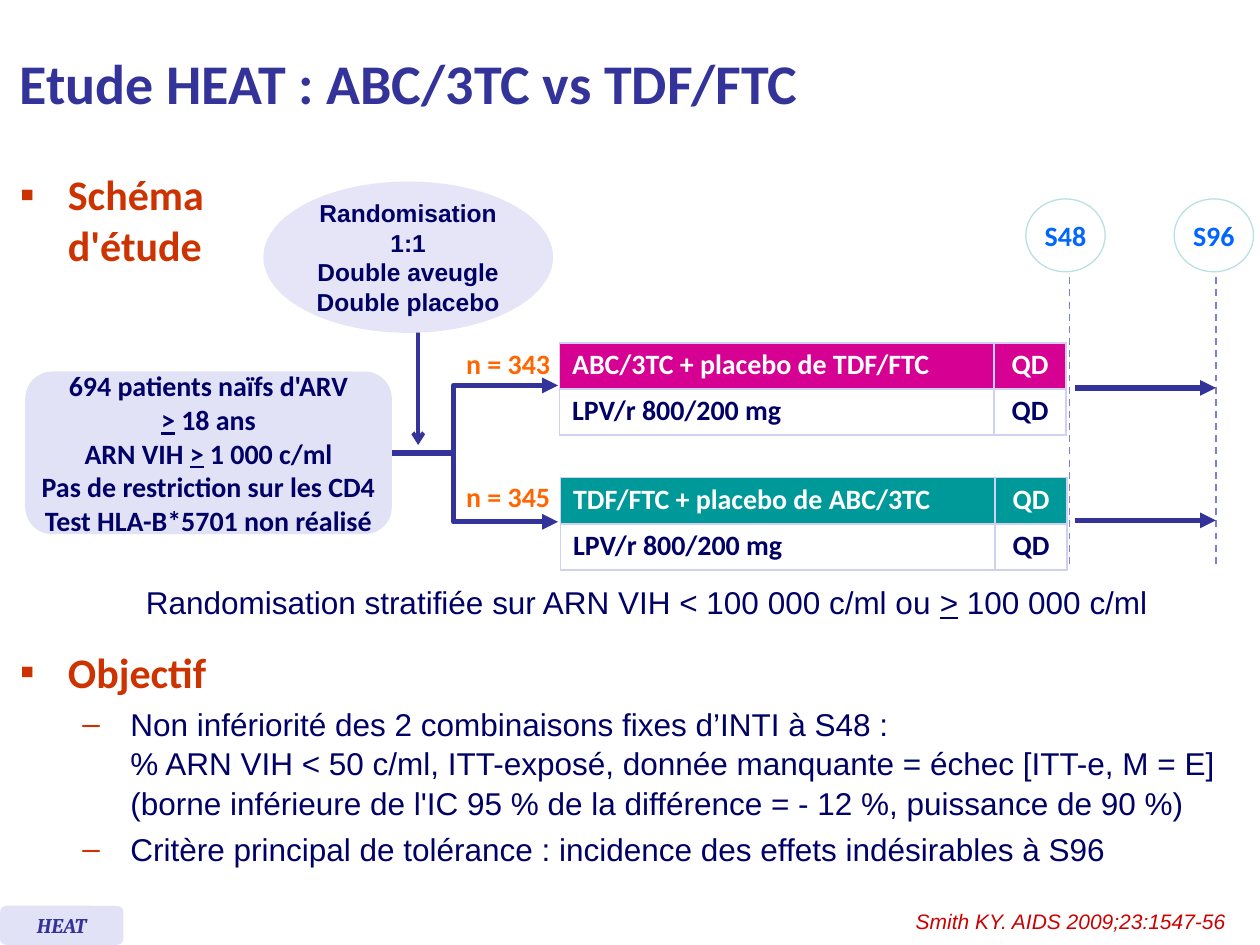
import pptx
import pptx.dml.color
import pptx.enum.dml
import pptx.enum.shapes
import pptx.enum.text
import pptx.oxml
import pptx.oxml.ns
import pptx.util
from pptx.util import Cm

NAVY, INDIGO, RED, LAVENDER = "000066", "333399", "CC3300", "E2E2F6"
LEFT = pptx.enum.text.PP_ALIGN.LEFT
CENTER = pptx.enum.text.PP_ALIGN.CENTER
MIDDLE = pptx.enum.text.MSO_ANCHOR.MIDDLE
SHAPES = pptx.enum.shapes.MSO_SHAPE
NAMESPACE = pptx.oxml.ns.nsdecls("a")


def rgb(value):
    return pptx.dml.color.RGBColor.from_string(value)


def write(text_frame, lines, size, font, color, bold=False, italic=False, align=LEFT, wrap=False):
    """Fill a text frame, one paragraph a line, underlining each ">" sign."""
    text_frame.word_wrap = wrap
    for index, line in enumerate(lines):
        paragraph = text_frame.paragraphs[0] if index == 0 else text_frame.add_paragraph()
        paragraph.alignment = align
        before, sign, after = line.partition(">")
        paragraph.text = before
        if sign:
            sign_run = paragraph.add_run()
            sign_run.text = sign
            sign_run.font.underline = True
            paragraph.add_run().text = after
        for run in paragraph.runs:
            run.font.size = pptx.util.Pt(size)
            run.font.name = font
            run.font.color.rgb = rgb(color)
            run.font.bold = bold
            run.font.italic = italic


presentation = pptx.Presentation()
presentation.slide_width, presentation.slide_height = Cm(25.4), Cm(19.05)
slide = presentation.slides.add_slide(presentation.slide_layouts[6])
shapes = slide.shapes

# Title and bulleted text
title = shapes.add_textbox(Cm(0.15), Cm(0.13), Cm(22.76), Cm(3.07))
title.text_frame.vertical_anchor = MIDDLE
write(title.text_frame, ["Etude HEAT : ABC/3TC vs TDF/FTC"], 32, "Calibri", INDIGO, bold=True, wrap=True)

design = shapes.add_textbox(Cm(0.15), Cm(3.28), Cm(5.16), Cm(1.45))
write(design.text_frame, ["Schéma d'étude"], 24, "Calibri", RED, bold=True, wrap=True)

objective = shapes.add_textbox(Cm(0.15), Cm(12.9), Cm(25.07), Cm(5))
write(objective.text_frame, [
    "Objectif",
    "Non infériorité des 2 combinaisons fixes d’INTI à S48 : \v"
    "% ARN VIH < 50 c/ml, ITT-exposé, donnée manquante = échec [ITT-e, M = E] "
    "(borne inférieure de l'IC 95 % de la différence = - 12 %, puissance de 90 %)",
    "Critère principal de tolérance : incidence des effets indésirables à S96",
], 18, "Arial", NAVY, wrap=True)
heading, *details = objective.text_frame.paragraphs
heading_font = heading.runs[0].font
heading_font.size, heading_font.name, heading_font.bold = pptx.util.Pt(24), "Calibri", True
heading_font.color.rgb = rgb(RED)
for paragraph in details:
    paragraph.level = 1
    paragraph.line_spacing = 1.05
    paragraph.space_before = pptx.util.Pt(3.6)

for paragraph in [design.text_frame.paragraphs[0], heading, *details]:
    properties = paragraph._p.get_or_add_pPr()
    properties.set("marL", str(Cm(2.23 if paragraph.level else 0.97)))
    properties.set("indent", str(-Cm(0.97)))
    bullet = "–" if paragraph.level else "▪"
    for element in (f'<a:buClr {NAMESPACE}><a:srgbClr val="{RED}"/></a:buClr>',
                    f'<a:buFont {NAMESPACE} typeface="Arial"/>',
                    f'<a:buChar {NAMESPACE} char="{bullet}"/>'):
        properties.append(pptx.oxml.parse_xml(element))

# Patient box and the lines of the diagram
patients = shapes.add_shape(SHAPES.ROUNDED_RECTANGLE, Cm(0.51), Cm(7.49), Cm(7.39), Cm(3.28))
lines = [
    # x1, y1, x2, y2, colour, width, arrowhead
    (8.43, 6.6, 8.43, 8.97, INDIGO, 2.25, "arrow"),
    (7.9, 9.13, 9.09, 9.13, INDIGO, 3, None),
    (24.51, 5.59, 24.51, 11.46, "7E7ED4", 1, None),
    (21.56, 5.59, 21.56, 11.46, "7E7ED4", 1, None),
    (21.67, 7.82, 24.51, 7.82, INDIGO, 3, "triangle"),
    (21.67, 10.49, 24.51, 10.49, INDIGO, 3, "triangle"),
]
for x1, y1, x2, y2, color, width, arrowhead in lines:
    connector = shapes.add_connector(
        pptx.enum.shapes.MSO_CONNECTOR.STRAIGHT, Cm(x1), Cm(y1), Cm(x2), Cm(y2))
    connector.line.color.rgb = rgb(color)
    connector.line.width = pptx.util.Pt(width)
    if width == 1:
        connector.line.dash_style = pptx.enum.dml.MSO_LINE.DASH
    if x1 == 7.9:
        connector.begin_connect(patients, 3)
    if arrowhead:
        connector.line._get_or_add_ln().append(
            pptx.oxml.parse_xml(f'<a:tailEnd {NAMESPACE} type="{arrowhead}"/>'))
    connector._element.spPr.append(pptx.oxml.parse_xml(f"<a:effectLst {NAMESPACE}/>"))

builder = shapes.build_freeform(Cm(11.25), Cm(7.77))
builder.add_line_segments(
    [(Cm(9.14), Cm(7.77)), (Cm(9.14), Cm(10.52)), (Cm(11.25), Cm(10.52))], close=False)
fork = builder.convert_to_shape()
fork.shadow.inherit = False
fork.fill.background()
fork.line.color.rgb = rgb(INDIGO)
fork.line.width = pptx.util.Pt(3)
for end in ("headEnd", "tailEnd"):
    fork.line._get_or_add_ln().append(
        pptx.oxml.parse_xml(f'<a:{end} {NAMESPACE} type="triangle"/>'))

# Filled shapes
randomisation = shapes.add_shape(SHAPES.OVAL, Cm(5.31), Cm(3.66), Cm(5.84), Cm(3.05))
badge = shapes.add_shape(SHAPES.ROUNDED_RECTANGLE, Cm(0), Cm(18.26), Cm(2.49), Cm(0.79))
for shape, fill in ((patients, LAVENDER), (randomisation, "E5E5F7"), (badge, LAVENDER)):
    shape.shadow.inherit = False
    shape.fill.solid()
    shape.fill.fore_color.rgb = rgb(fill)
    shape.line.fill.background()
    shape.text_frame.vertical_anchor = MIDDLE
write(patients.text_frame, [
    "694 patients naïfs d'ARV", "> 18 ans", "ARN VIH > 1 000 c/ml",
    "Pas de restriction sur les CD4", "Test HLA-B*5701 non réalisé",
], 16, "Calibri", NAVY, bold=True, align=CENTER)
write(randomisation.text_frame, ["Randomisation", "1:1", "Double aveugle", "Double placebo"],
      14, "Arial", NAVY, bold=True, align=CENTER)
write(badge.text_frame, ["HEAT"], 12, "Cambria", INDIGO, bold=True, italic=True, align=CENTER)

for week, left in (("S48", 20.68), ("S96", 23.67)):
    circle = shapes.add_shape(SHAPES.OVAL, Cm(left), Cm(4.01), Cm(1.6), Cm(1.47))
    circle.shadow.inherit = False
    circle.fill.solid()
    circle.fill.fore_color.rgb = rgb("FFFFFF")
    circle.line.color.rgb = rgb("BBE0E3")
    circle.line.width = pptx.util.Pt(0.75)
    circle.text_frame.vertical_anchor = MIDDLE
    write(circle.text_frame, [week], 16, "Calibri", "0066FF", bold=True, align=CENTER)

# Treatment arms: a table and its number of patients
arms = [
    ("ABC/3TC + placebo de TDF/FTC", "D60093", 11.28, 6.91, "n = 343", 6.86),
    ("TDF/FTC + placebo de ABC/3TC", "009999", 11.3, 9.63, "n = 345", 9.55),
]
for treatment, fill, left, top, count, count_top in arms:
    table = shapes.add_table(2, 2, Cm(left), Cm(top), Cm(10.21), Cm(1.86)).table
    table.columns[0].width, table.columns[1].width = Cm(8.76), Cm(1.45)
    for row, drug in enumerate((treatment, "LPV/r 800/200 mg")):
        table.rows[row].height = Cm(0.93)
        for column, text in enumerate((drug, "QD")):
            cell = table.cell(row, column)
            cell.vertical_anchor = MIDDLE
            write(cell.text_frame, [text], 16, "Calibri", NAVY if row else "FFFFFF",
                  bold=True, align=CENTER if column else LEFT, wrap=True)
            cell.text_frame.paragraphs[0].line_spacing = 0.8
            properties = cell._tc.get_or_add_tcPr()
            for side in ("lnL", "lnR", "lnT", "lnB"):
                properties.append(pptx.oxml.parse_xml(
                    f'<a:{side} {NAMESPACE} w="12700"><a:solidFill>'
                    f'<a:srgbClr val="D0D0F0"/></a:solidFill></a:{side}>'))
            if row:
                cell.fill.background()
            else:
                cell.fill.solid()
                cell.fill.fore_color.rgb = rgb(fill)
    label = shapes.add_textbox(Cm(9.14), Cm(count_top), Cm(2.21), Cm(0.94))
    write(label.text_frame, [count], 16, "Calibri", "FF6600", bold=True, align=CENTER)

# Stratification note and reference
note = shapes.add_textbox(Cm(2.69), Cm(11.63), Cm(20.73), Cm(1.02))
write(note.text_frame, ["Randomisation stratifiée sur ARN VIH < 100 000 c/ml ou > 100 000 c/ml"],
      18, "Arial", NAVY)
reference = shapes.add_textbox(Cm(18.21), Cm(18.19), Cm(6.81), Cm(0.76))
write(reference.text_frame, ["Smith KY. AIDS 2009;23:1547-56"], 12, "Arial", "CC0000", italic=True)

presentation.save("out.pptx")
